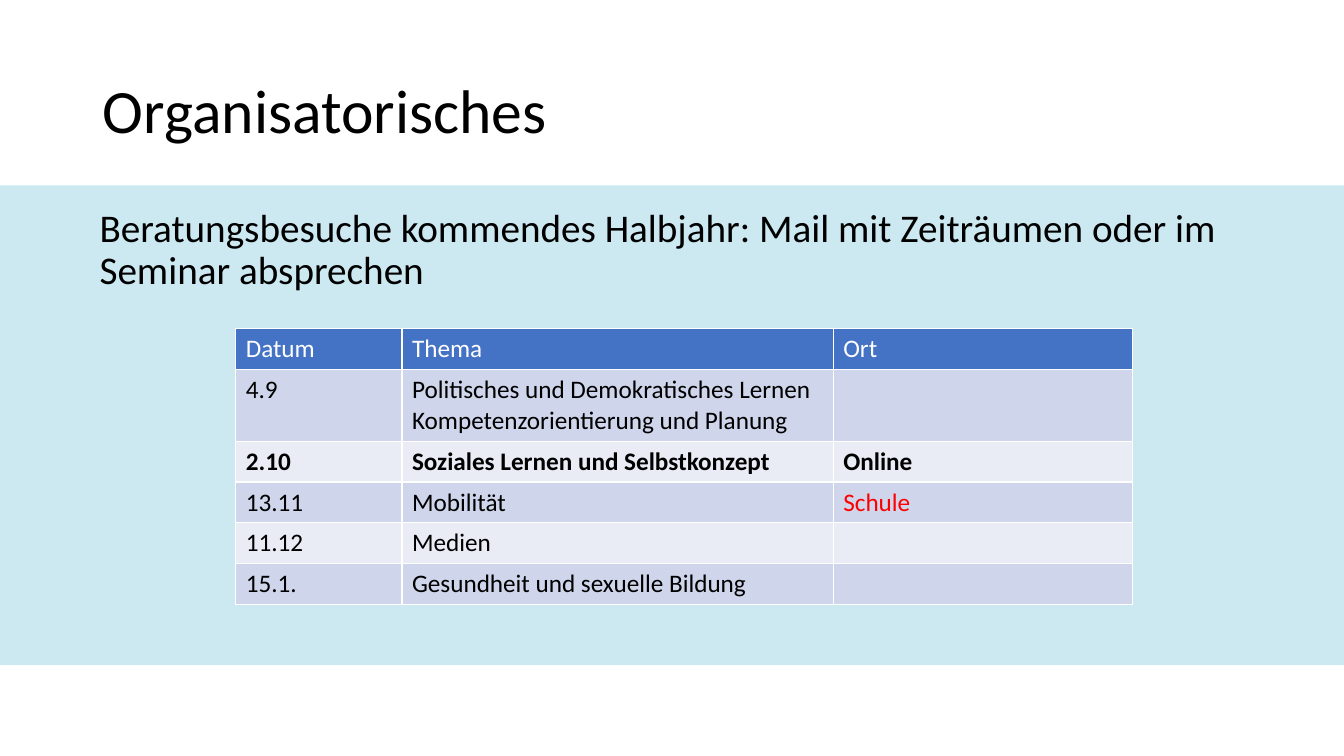
import pptx
import pptx.util
import pptx.dml.color
import pptx.enum.shapes
import pptx.enum.text

Cm = pptx.util.Cm
Pt = pptx.util.Pt
RGBColor = pptx.dml.color.RGBColor
ALIGN = pptx.enum.text.PP_ALIGN
ANCHOR = pptx.enum.text.MSO_ANCHOR

BLACK = RGBColor(0x00, 0x00, 0x00)
WHITE = RGBColor(0xFF, 0xFF, 0xFF)
RED = RGBColor(0xFF, 0x00, 0x00)
AQUA = RGBColor(0xCC, 0xE9, 0xF2)
BLUE = RGBColor(0x44, 0x72, 0xC4)
BANDS = (RGBColor(0xE9, 0xEB, 0xF5), RGBColor(0xCF, 0xD5, 0xEA))

TITLE = "Organisatorisches"
LEAD = "Beratungsbesuche kommendes Halbjahr: Mail mit Zeiträumen oder im Seminar absprechen"
DATES = [
    ("Datum", "Thema", "Ort"),
    ("4.9", "Politisches und Demokratisches Lernen\nKompetenzorientierung und Planung", ""),
    ("2.10", "Soziales Lernen und Selbstkonzept", "Online"),
    ("13.11", "Mobilität", "Schule"),
    ("11.12", "Medien", ""),
    ("15.1.", "Gesundheit und sexuelle Bildung", ""),
]
BOLD_ROW = 2
RED_CELL = (3, 2)
WIDTHS = (4.19, 10.87, 7.54)
LINE, PAD = 0.77, 0.26  # height of a text line and the space around it


def style(frame, size, color, bold=False):
    for para in frame.paragraphs:
        font = para.font
        for run in para.runs:
            font = run.font
        font.name = "Calibri"
        font.size = Pt(size)
        font.bold = bold
        font.color.rgb = color


def fill_box(box, text, size, anchor):
    """Put one left-aligned black paragraph into a title or text box."""
    frame = box.text_frame
    frame.word_wrap = True
    frame.auto_size = pptx.enum.text.MSO_AUTO_SIZE.NONE
    frame.vertical_anchor = anchor
    frame.text = text
    frame.paragraphs[0].alignment = ALIGN.LEFT
    frame.paragraphs[0].line_spacing = 0.9
    style(frame, size, BLACK)


def add_dates(slide):
    heights = [LINE * (1 + max(t.count("\n") for t in row)) + PAD for row in DATES]
    table = slide.shapes.add_table(
        len(DATES), len(WIDTHS), Cm(5.94), Cm(8.28), Cm(sum(WIDTHS)), Cm(sum(heights))
    ).table
    for col, width in zip(table.columns, WIDTHS):
        col.width = Cm(width)
    for r, texts in enumerate(DATES):
        table.rows[r].height = Cm(heights[r])
        for c, text in enumerate(texts):
            cell = table.cell(r, c)
            cell.text = text
            cell.fill.solid()
            cell.fill.fore_color.rgb = BANDS[r % 2] if r else BLUE
            color = RED if (r, c) == RED_CELL else BLACK if r else WHITE
            style(cell.text_frame, 18, color, r == BOLD_ROW)


def main():
    deck = pptx.Presentation()
    deck.slide_width, deck.slide_height = Cm(33.87), Cm(19.05)
    slide = deck.slides.add_slide(deck.slide_layouts[5])

    band = slide.shapes.add_shape(
        pptx.enum.shapes.MSO_SHAPE.RECTANGLE, 0, Cm(4.67), deck.slide_width, Cm(12.09)
    )
    band.shadow.inherit = False
    band.fill.solid()
    band.fill.fore_color.rgb = AQUA
    band.line.fill.background()

    title = slide.shapes.title
    title.left, title.top, title.width, title.height = Cm(2.34), Cm(1.02), Cm(29.21), Cm(3.68)
    fill_box(title, TITLE, 44, ANCHOR.MIDDLE)

    lead = slide.shapes.add_textbox(Cm(2.26), Cm(5.13), Cm(29.34), Cm(11.15))
    fill_box(lead, LEAD, 28, ANCHOR.TOP)

    add_dates(slide)
    deck.save("out.pptx")


if __name__ == "__main__":
    main()
